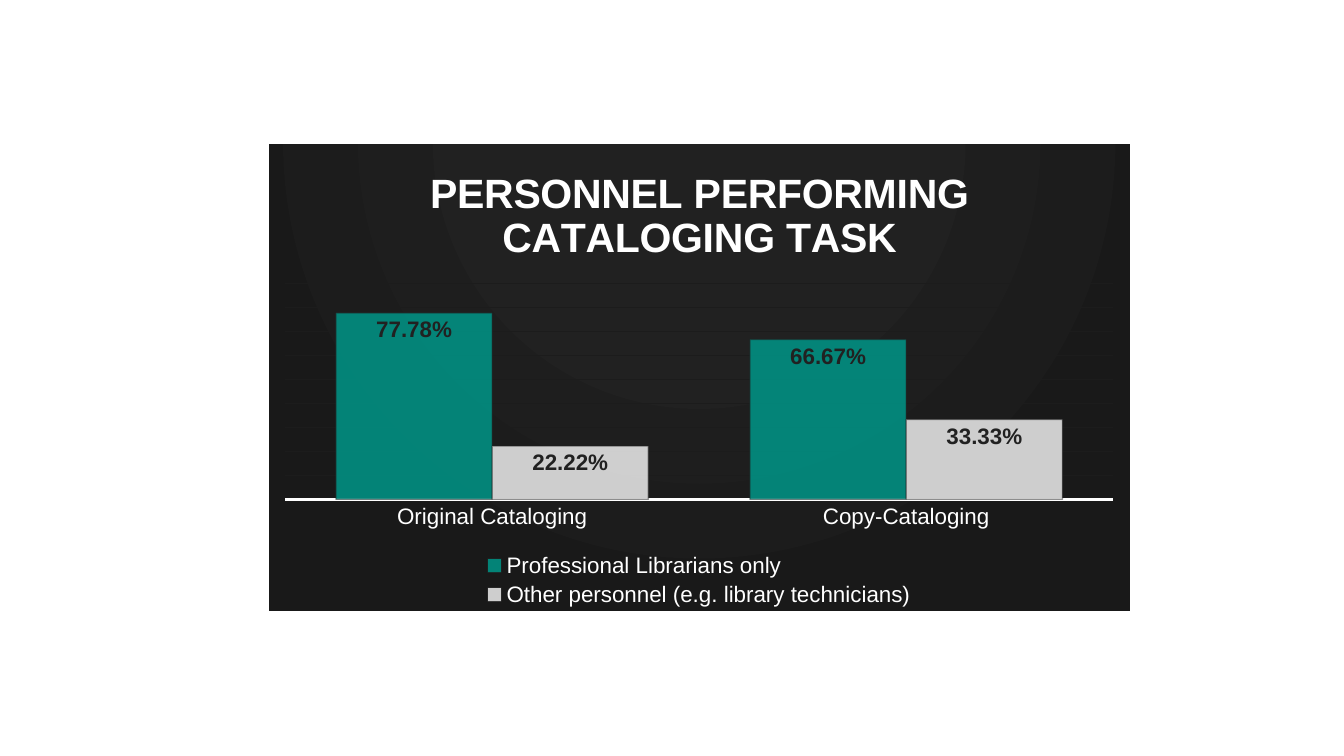
from dataclasses import dataclass

from lxml.etree import SubElement
from pptx import Presentation
from pptx.chart.data import CategoryChartData
from pptx.chart.chart import Chart
from pptx.dml.color import RGBColor
from pptx.enum.chart import (XL_CHART_TYPE, XL_LABEL_POSITION,
                             XL_LEGEND_POSITION, XL_TICK_MARK)
from pptx.enum.shapes import MSO_SHAPE
from pptx.oxml import parse_xml
from pptx.oxml.ns import nsdecls, qn
from pptx.util import Cm, Pt

COLORS = {
    "white": "FFFFFF",
    "dark": "212121",
    "edge": "191919",
    "grid": "1C1C1C",
    "teal": "009688",
    "light": "EEEEEE",
}
FONT = "Arial"
PERCENT = "0.00%"


@dataclass
class PersonnelSeries:
    name: str
    values: tuple[float, ...]
    color: str


CATEGORIES = ("Original Cataloging", "Copy-Cataloging")
SERIES = (
    PersonnelSeries("Professional Librarians only", (0.7778, 0.6667), "teal"),
    PersonnelSeries("Other personnel (e.g. library technicians)",
                    (0.2222, 0.3333), "light"),
)


def rgb(name: str) -> RGBColor:
    return RGBColor.from_string(COLORS[name])


def style_font(font, size: float = 12, color: str = "white", bold: bool = False) -> None:
    font.name = FONT
    font.size = Pt(size)
    font.bold = bold
    font.color.rgb = rgb(color)


def write_text(text_frame, text: str, **font_format) -> None:
    text_frame.text = text
    style_font(text_frame.paragraphs[0].runs[0].font, **font_format)


def style_line(line, color: str, width: float) -> None:
    line.color.rgb = rgb(color)
    line.width = Pt(width)


def set_opacity(fill_parent, percent: int) -> None:
    """Make the solid fill directly under an element partly transparent."""
    color = fill_parent.find(qn("a:solidFill"))[0]
    SubElement(color, qn("a:alpha"), val=str(percent * 1000))


def set_chart_area(chart: Chart) -> None:
    """Give the chart area a radial gradient and a thin border."""
    stops = "".join(
        f'<a:gs pos="{position * 1000}"><a:srgbClr val="{COLORS[color]}"/></a:gs>'
        for position, color in ((0, "dark"), (39, "dark"), (100, "edge")))
    properties = parse_xml(
        f'<c:spPr {nsdecls("c", "a")}><a:gradFill><a:gsLst>{stops}</a:gsLst>'
        '<a:path path="circle">'
        '<a:fillToRect l="50000" t="-80000" r="50000" b="180000"/></a:path></a:gradFill>'
        f'<a:ln w="{Pt(0.75)}"><a:solidFill><a:srgbClr val="{COLORS["white"]}"/>'
        '</a:solidFill></a:ln></c:spPr>')
    chart.element.find(qn("c:txPr")).addprevious(properties)


def set_plot_layout(chart: Chart, **fractions: float) -> None:
    """Place the inner plot area by fractions of the chart's size."""
    plot_area = chart.element.find(qn("c:chart")).find(qn("c:plotArea"))
    for old_layout in plot_area.findall(qn("c:layout")):
        plot_area.remove(old_layout)
    values = "".join(f'<c:{key} val="{value}"/>' for key, value in fractions.items())
    plot_area.insert(0, parse_xml(
        f'<c:layout {nsdecls("c")}><c:manualLayout><c:layoutTarget val="inner"/>'
        '<c:xMode val="edge"/><c:yMode val="edge"/>'
        f'{values}</c:manualLayout></c:layout>'))


def style_series(series, color: str) -> None:
    series.format.fill.solid()
    series.format.fill.fore_color.rgb = rgb(color)
    style_line(series.format.line, "dark", 0.75)
    properties = series.format.fill._xPr
    set_opacity(properties, 85)
    set_opacity(properties.find(qn("a:ln")), 50)

    labels = series.data_labels
    labels.show_value = True
    labels.number_format = PERCENT
    labels.number_format_is_linked = False
    labels.position = XL_LABEL_POSITION.INSIDE_END
    style_font(labels.font, color="dark", bold=True)


def add_personnel_chart(slide) -> None:
    data = CategoryChartData(number_format=PERCENT)
    data.categories = CATEGORIES
    for item in SERIES:
        data.add_series(item.name, item.values)
    chart = slide.shapes.add_chart(
        XL_CHART_TYPE.COLUMN_CLUSTERED,
        Cm(5.05), Cm(2.69), Cm(16.33), Cm(8.89), data).chart
    style_font(chart.font, size=10)
    set_chart_area(chart)

    # Title and legend
    chart.has_title = True
    write_text(chart.chart_title.text_frame,
               "PERSONNEL PERFORMING CATALOGING TASK", size=22, bold=True)
    chart.chart_title.include_in_layout = False
    chart.has_legend = True
    chart.legend.position = XL_LEGEND_POSITION.BOTTOM
    chart.legend.include_in_layout = False
    style_font(chart.legend.font)

    # Axes
    category_axis = chart.category_axis
    category_axis.major_tick_mark = XL_TICK_MARK.NONE
    style_font(category_axis.tick_labels.font)
    style_line(category_axis.format.line, "white", 1.5)
    value_axis = chart.value_axis
    value_axis.visible = False
    value_axis.minimum_scale = 0
    value_axis.maximum_scale = 0.9
    value_axis.major_unit = 0.1
    value_axis.has_major_gridlines = True
    style_line(value_axis.major_gridlines.format.line, "grid", 0.75)

    # Columns
    plot = chart.plots[0]
    plot.gap_width = 65
    plot.overlap = 0
    plot.vary_by_categories = False
    for series, item in zip(plot.series, SERIES):
        style_series(series, item.color)
    set_plot_layout(chart, x=0.02, y=0.3, w=0.96, h=0.46)


def main() -> None:
    presentation = Presentation()
    presentation.slide_width = Cm(25.4)
    presentation.slide_height = Cm(14.29)
    slide = presentation.slides.add_slide(presentation.slide_layouts[6])

    # Background and white backdrop
    slide.background.fill.solid()
    slide.background.fill.fore_color.rgb = rgb("dark")
    backdrop = slide.shapes.add_shape(
        MSO_SHAPE.RECTANGLE, 0, 0, presentation.slide_width, presentation.slide_height)
    backdrop.shadow.inherit = False
    backdrop.fill.solid()
    backdrop.fill.fore_color.rgb = rgb("white")
    style_line(backdrop.line, "white", 2)

    add_personnel_chart(slide)
    presentation.save("out.pptx")


if __name__ == "__main__":
    main()
